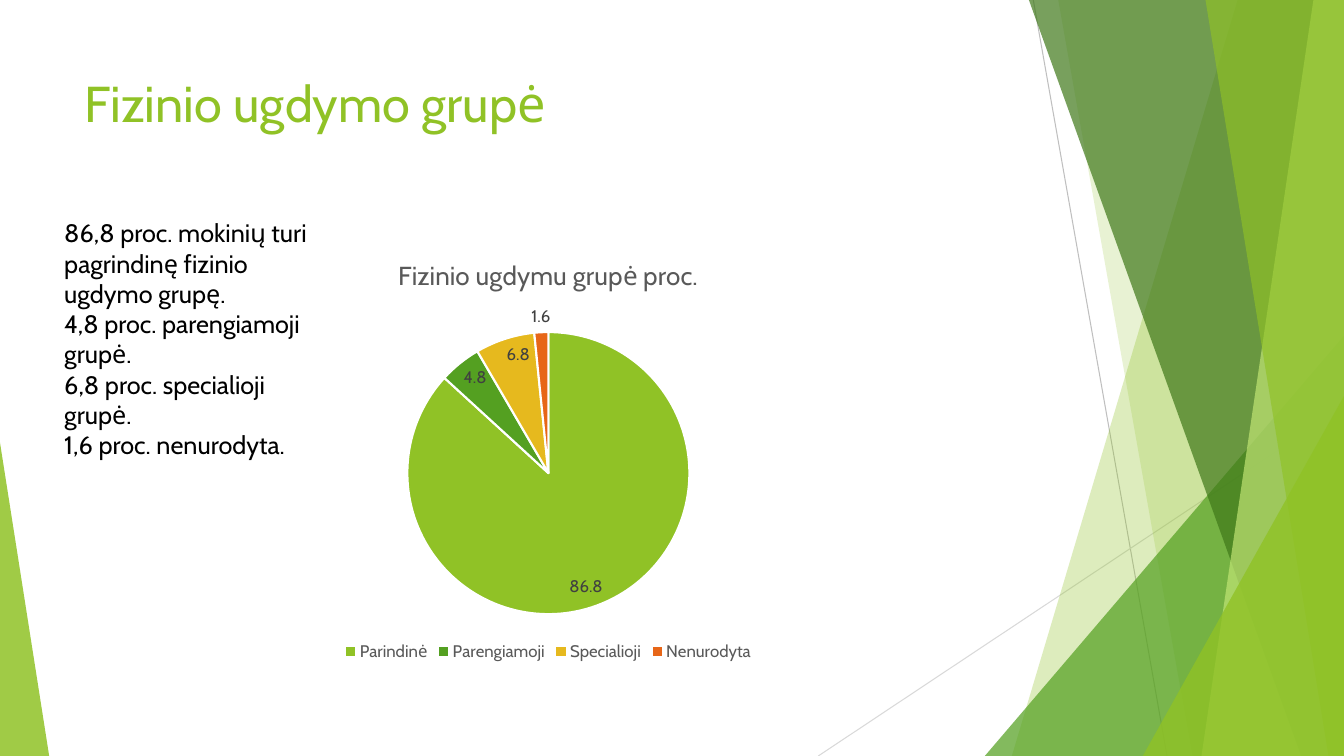
from lxml.etree import SubElement
from pptx import Presentation
from pptx.chart.data import CategoryChartData
from pptx.dml.color import RGBColor
from pptx.enum.chart import XL_CHART_TYPE, XL_LABEL_POSITION, XL_LEGEND_POSITION
from pptx.enum.shapes import MSO_CONNECTOR, MSO_SHAPE
from pptx.oxml import parse_xml
from pptx.oxml.ns import nsdecls, qn
from pptx.util import Cm, Pt

FONT = "Cabin"
LIME = RGBColor(0x90, 0xC2, 0x26)
GREEN = RGBColor(0x54, 0xA0, 0x21)
DARK_GREEN = RGBColor(0x3F, 0x78, 0x19)
PALE_LIME = RGBColor(0xC0, 0xE4, 0x74)
YELLOW = RGBColor(0xE6, 0xB9, 0x1E)
ORANGE = RGBColor(0xE7, 0x66, 0x18)
BLACK = RGBColor(0, 0, 0)
WHITE = RGBColor(0xFF, 0xFF, 0xFF)
LABEL_GRAY = RGBColor(0x40, 0x40, 0x40)
TEXT_GRAY = RGBColor(0x59, 0x59, 0x59)
LINE_GRAY = RGBColor(0xBF, 0xBF, 0xBF)
LIGHT_GRAY = RGBColor(0xD9, 0xD9, 0xD9)
WIDTH, HEIGHT = 33.87, 19.05


def style(font, size, color):
    font.name, font.size, font.color.rgb = FONT, Pt(size), color


def add_text(text, left, top, width, height, size=18, color=BLACK):
    """Add a text box with one paragraph for each line of text."""
    tf = s.shapes.add_textbox(Cm(left), Cm(top), Cm(width), Cm(height)).text_frame
    tf.word_wrap = True
    tf.text = text
    for p in tf.paragraphs:
        style(p.runs[0].font, size, color)


prs = Presentation()
prs.slide_width, prs.slide_height = Cm(WIDTH), Cm(HEIGHT)
s = prs.slides.add_slide(prs.slide_layouts[6])

# Thin lines behind the facets
for x1, y1, x2, y2, color in [
    (26.04, 0, 29.41, HEIGHT, LINE_GRAY),
    (WIDTH, 10.24, 20.62, HEIGHT, LIGHT_GRAY),
]:
    line = s.shapes.add_connector(MSO_CONNECTOR.STRAIGHT, Cm(x1), Cm(y1), Cm(x2), Cm(y2))
    line.line.color.rgb = color
    line.line.width = Pt(0.75)
    SubElement(line._element.spPr, qn("a:effectLst"))

# Facets: (top x, bottom x) reaches the right edge of the slide;
# (left, top, width, apex) is a triangle standing on the bottom edge
for outline, color, opacity in [
    ((31.19, 25.5), LIME, 30),
    ((26.67, 30.05), LIME, 20),
    ((24.82, 8.46, 9.05, 1), GREEN, 72),
    ((25.93, 32.79), DARK_GREEN, 70),
    ((33.1, 30.28), PALE_LIME, 70),
    ((30.38, 33.48), LIME, 65),
    ((28.8, 9.98, 5.07, 1), LIME, 80),
    ((0, 11.15, 1.24, 0), LIME, 85),
]:
    if len(outline) == 2:
        top_x, bottom_x = outline
        builder = s.shapes.build_freeform(Cm(top_x), 0)
        builder.add_line_segments(
            [(Cm(WIDTH), 0), (Cm(WIDTH), Cm(HEIGHT)), (Cm(bottom_x), Cm(HEIGHT))]
        )
        sp = builder.convert_to_shape()
    else:
        left, top, width, apex = outline
        sp = s.shapes.add_shape(
            MSO_SHAPE.ISOSCELES_TRIANGLE, Cm(left), Cm(top), Cm(width), Cm(HEIGHT - top)
        )
        sp.adjustments[0] = apex
    sp.shadow.inherit = False
    sp.line.fill.background()
    sp.fill.solid()
    sp.fill.fore_color.rgb = color
    rgb = sp._element.spPr.find(qn("a:solidFill"))[0]
    SubElement(rgb, qn("a:alpha"), val=str(opacity * 1000))

add_text("Fizinio ugdymo grupė", 1.88, 1.7, 23.88, 3.66, size=36, color=LIME)

# Pie chart
data = CategoryChartData()
data.categories = ["Parindinė", "Parengiamoji", "Specialioji", "Nenurodyta"]
data.add_series("Series 1", (86.8, 4.8, 6.8, 1.6))
chart = s.shapes.add_chart(
    XL_CHART_TYPE.PIE, Cm(1.88), Cm(6), Cm(23.88), Cm(10.77), data
).chart
style(chart.font, 10, BLACK)
chart.has_title = True
chart.chart_title.include_in_layout = False
p = chart.chart_title.text_frame.paragraphs[0]
r = p.add_run()
r.text = "Fizinio ugdymu grupė proc."
style(r.font, 18.6, TEXT_GRAY)
r.font.bold = False
chart.has_legend = True
chart.legend.position = XL_LEGEND_POSITION.BOTTOM
chart.legend.include_in_layout = False
style(chart.legend.font, 12, TEXT_GRAY)

plot = chart.plots[0]
plot.vary_by_categories = True
plot.has_data_labels = True
labels = plot.data_labels
labels.show_value = True
labels.show_percentage = False
labels.position = XL_LABEL_POSITION.INSIDE_END
style(labels.font, 12, LABEL_GRAY)
for i, color in enumerate([LIME, GREEN, YELLOW, ORANGE]):
    point = plot.series[0].points[i]
    point.format.fill.solid()
    point.format.fill.fore_color.rgb = color
    point.format.line.color.rgb = WHITE
    point.format.line.width = Pt(1.5)
    label = point.data_label
    style(label.font, 12, LABEL_GRAY)
    label.position = XL_LABEL_POSITION.OUTSIDE_END if i == 3 else XL_LABEL_POSITION.INSIDE_END

# Fixed place for the pie inside the chart
plot_area = chart._chartSpace.chart.plotArea
for old in plot_area.findall(qn("c:layout")):
    plot_area.remove(old)
plot_area.insert(0, parse_xml(
    f'<c:layout {nsdecls("c")}><c:manualLayout><c:layoutTarget val="inner"/>'
    '<c:xMode val="edge"/><c:yMode val="edge"/><c:x val="0.35"/><c:y val="0.22"/>'
    '<c:w val="0.3"/><c:h val="0.66"/></c:manualLayout></c:layout>'
))

add_text(
    "86,8 proc. mokinių turi pagrindinę fizinio ugdymo grupę.\n"
    "4,8 proc. parengiamoji grupė.\n"
    "6,8 proc. specialioji grupė.\n"
    "1,6 proc. nenurodyta.",
    1.37, 5.36, 6.73, 7.19,
)

prs.save("out.pptx")
